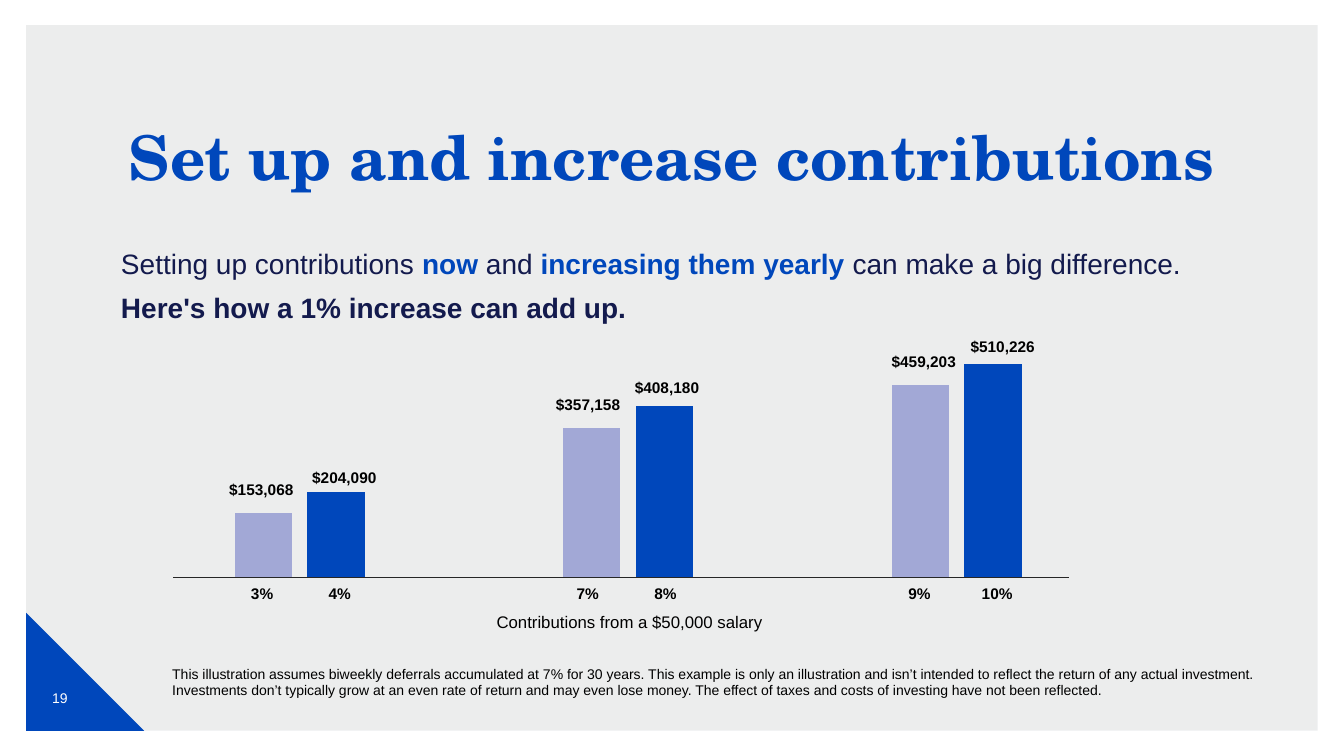
import pptx
import pptx.chart.data
import pptx.dml.color
import pptx.enum.chart
import pptx.enum.shapes
import pptx.enum.text
import pptx.oxml
import pptx.oxml.ns
import pptx.util
from lxml import etree

Inches = pptx.util.Inches
ALIGN = pptx.enum.text.PP_ALIGN
ANCHOR = pptx.enum.text.MSO_ANCHOR
SHAPE = pptx.enum.shapes.MSO_SHAPE

COLORS = {
    "panel": "D0D3D4", "blue": "0047BB", "lilac": "A2A8D6", "deep": "003B9B",
    "navy": "131A4D", "black": "000000", "white": "FFFFFF", "baseline": "262626",
}
LABEL = {"size": 11, "bold": True}

# Each pair: shares of salary, left edge of the first share, bar heights,
# and (amount, left, top, alignment) of the two value labels
PAIRS = [
    (("3%", "4%"), 2.24, (30, 40),
     (("$153,068", 1.66, 4.71, ALIGN.RIGHT), ("$204,090", 2.74, 4.59, ALIGN.CENTER))),
    (("7%", "8%"), 5.47, (70, 80),
     (("$357,158", 4.9, 3.87, ALIGN.RIGHT), ("$408,180", 5.94, 3.7, ALIGN.CENTER))),
    (("9%", "10%"), 8.76, (90, 100),
     (("$459,203", 8.23, 3.44, ALIGN.RIGHT), ("$510,226", 9.27, 3.29, ALIGN.CENTER))),
]


def rgb(name):
    return pptx.dml.color.RGBColor.from_string(COLORS[name])


def set_font(font, size=12, color="black", bold=False, name="Arial"):
    values = {"size": pptx.util.Pt(size), "bold": bold, "name": name}
    for key, value in values.items():
        setattr(font, key, value)
    font.color.rgb = rgb(color)


def add_text(slide, box, paragraphs, align=ALIGN.LEFT, anchor=ANCHOR.TOP,
             side=0.1, paragraph_format=None):
    """Place paragraphs, each a list of (text, font values) runs, in a box."""
    frame = slide.shapes.add_textbox(*map(Inches, box)).text_frame
    settings = {"word_wrap": True, "vertical_anchor": anchor,
                "margin_left": Inches(side), "margin_right": Inches(side)}
    for key, value in settings.items():
        setattr(frame, key, value)
    for index, runs in enumerate(paragraphs):
        paragraph = frame.add_paragraph() if index else frame.paragraphs[0]
        paragraph.alignment = align
        for key, value in (paragraph_format or {}).items():
            setattr(paragraph, key, value)
        for text, font_values in runs:
            run = paragraph.add_run()
            run.text = text
            set_font(run.font, **font_values)


def add_plain_shape(slide, kind, box, color):
    shape = slide.shapes.add_shape(kind, *map(Inches, box))
    shape.shadow.inherit = False
    shape.fill.solid()
    shape.fill.fore_color.rgb = rgb(color)
    shape.line.fill.background()
    return shape


def add_background(slide, left, top, width, height):
    panel = add_plain_shape(slide, SHAPE.RECTANGLE, (left, top, width, height), "panel")
    color = panel.fill._xPr.find(".//" + pptx.oxml.ns.qn("a:srgbClr"))
    etree.SubElement(color, pptx.oxml.ns.qn("a:alpha"), val="40000")

    # Corner triangle with the page number
    corner = 1.17
    corner_top = top + height - corner
    add_plain_shape(slide, SHAPE.RIGHT_TRIANGLE, (left, corner_top, corner, corner), "blue")
    add_text(slide, (left + 0.06, corner_top + 0.55, 0.55, 0.58),
             [[("19", {"size": 10, "color": "white"})]], ALIGN.CENTER, ANCHOR.MIDDLE)


def add_heading(slide, left, top, width, height):
    title = {"size": 44, "color": "blue", "bold": True, "name": "TeX Gyre Schola"}
    add_text(slide, (left, top, width, height),
             [[("Set up and increase contributions", title)]],
             ALIGN.CENTER, ANCHOR.MIDDLE, 0, {"line_spacing": 0.9})


def add_introduction(slide, left, top, width, height):
    plain = {"size": 20, "color": "navy"}
    strong = {"size": 20, "color": "blue", "bold": True}
    add_text(slide, (left, top, width, height), [
        [("Setting up contributions ", plain), ("now", strong), (" and ", plain),
         ("increasing them yearly ", strong), ("can make a big difference.", plain)],
        [("Here's how a 1% increase can add up.", {**plain, "bold": True})],
    ], side=0, paragraph_format={"line_spacing": 0.9, "space_before": pptx.util.Pt(10)})


def set_plot_area(chart, x, y, w, h):
    """Fix the inner plot area as fractions of the chart frame."""
    plot_area = chart._chartSpace.chart.plotArea
    for layout in plot_area.findall(pptx.oxml.ns.qn("c:layout")):
        plot_area.remove(layout)
    layout = etree.Element(pptx.oxml.ns.qn("c:layout"))
    manual = etree.SubElement(layout, pptx.oxml.ns.qn("c:manualLayout"))
    settings = {"layoutTarget": "inner", "xMode": "edge", "yMode": "edge",
                "x": x, "y": y, "w": w, "h": h}
    for tag, value in settings.items():
        etree.SubElement(manual, pptx.oxml.ns.qn("c:" + tag), val=str(value))
    plot_area.insert(0, layout)


def add_bars(slide, left, top, width, height):
    data = pptx.chart.data.CategoryChartData()
    data.categories = ["1", "2", "3"]
    for index in range(2):
        data.add_series(f"Series {index + 1}", [bars[index] for _, _, bars, _ in PAIRS])
    # The empty third series sets the bar width and the space after each pair
    data.add_series("Series 3", [None] * len(PAIRS))
    chart = slide.shapes.add_chart(
        pptx.enum.chart.XL_CHART_TYPE.COLUMN_CLUSTERED,
        *map(Inches, (left, top, width, height)), data).chart
    chart.has_legend = chart.has_title = False
    set_font(chart.font, size=10, color="navy")

    plot = chart.plots[0]
    for key, value in {"gap_width": 219, "overlap": -27, "vary_by_categories": False}.items():
        setattr(plot, key, value)
    for series, color in zip(plot.series, ("lilac", "blue", "deep")):
        series.format.fill.solid()
        series.format.fill.fore_color.rgb = rgb(color)

    for axis in (chart.category_axis, chart.value_axis):
        axis.visible = axis.has_major_gridlines = False
    chart.value_axis.minimum_scale = 0
    chart.value_axis.maximum_scale = 118
    set_plot_area(chart, round(0.25 / width, 3), 0.064, round(9.77 / width, 3), 0.871)


def add_contribution_chart(slide, left, top, width, height):
    add_bars(slide, left, top, width, height)

    # Baseline
    start, base = left + 0.27, top + 2.69
    line = slide.shapes.add_connector(
        pptx.enum.shapes.MSO_CONNECTOR.STRAIGHT,
        *map(Inches, (start, base, start + 8.88, base)))
    line.line.color.rgb = rgb("baseline")
    line.line.width = pptx.util.Pt(0.5)
    etree.SubElement(line._element.spPr, pptx.oxml.ns.qn("a:effectLst"))

    # Amounts above the bars and shares below them
    for shares, share_left, _, amounts in PAIRS:
        for amount, amount_left, amount_top, align in amounts:
            add_text(slide, (amount_left, amount_top, 1.35, 0.35), [[(amount, LABEL)]], align)
        for index, share in enumerate(shares):
            add_text(slide, (share_left + index * 0.77, base + 0.02, 0.72, 0.35),
                     [[(share, LABEL)]], ALIGN.CENTER)

    # Axis caption
    add_text(slide, (left + 0.46, base + 0.29, 8.67, 0.3),
             [[("Contributions from a $50,000 salary", {"size": 12})]], ALIGN.CENTER)


def add_footnote(slide, left, top, width, height):
    add_text(slide, (left, top, width, height), [[(
        "This illustration assumes biweekly deferrals accumulated at 7% for 30 years. "
        "This example is only an illustration and isn’t intended to reflect the return "
        "of any actual investment. Investments don’t typically grow at an even rate of "
        "return and may even lose money. The effect of taxes and costs of investing "
        "have not been reflected.", {"size": 10})]])


def main():
    presentation = pptx.Presentation()
    presentation.slide_width = Inches(13.33)
    presentation.slide_height = Inches(7.5)
    slide = presentation.slides.add_slide(presentation.slide_layouts[6])
    add_background(slide, 0.26, 0.25, 12.81, 7)
    add_introduction(slide, 1.2, 2.43, 10.91, 1.2)
    add_footnote(slide, 1.61, 6.55, 11.25, 0.44)
    add_contribution_chart(slide, 1.45, 3.04, 11.62, 2.88)
    add_heading(slide, 1.15, 0.95, 11.03, 1.28)
    presentation.save("out.pptx")


if __name__ == "__main__":
    main()
